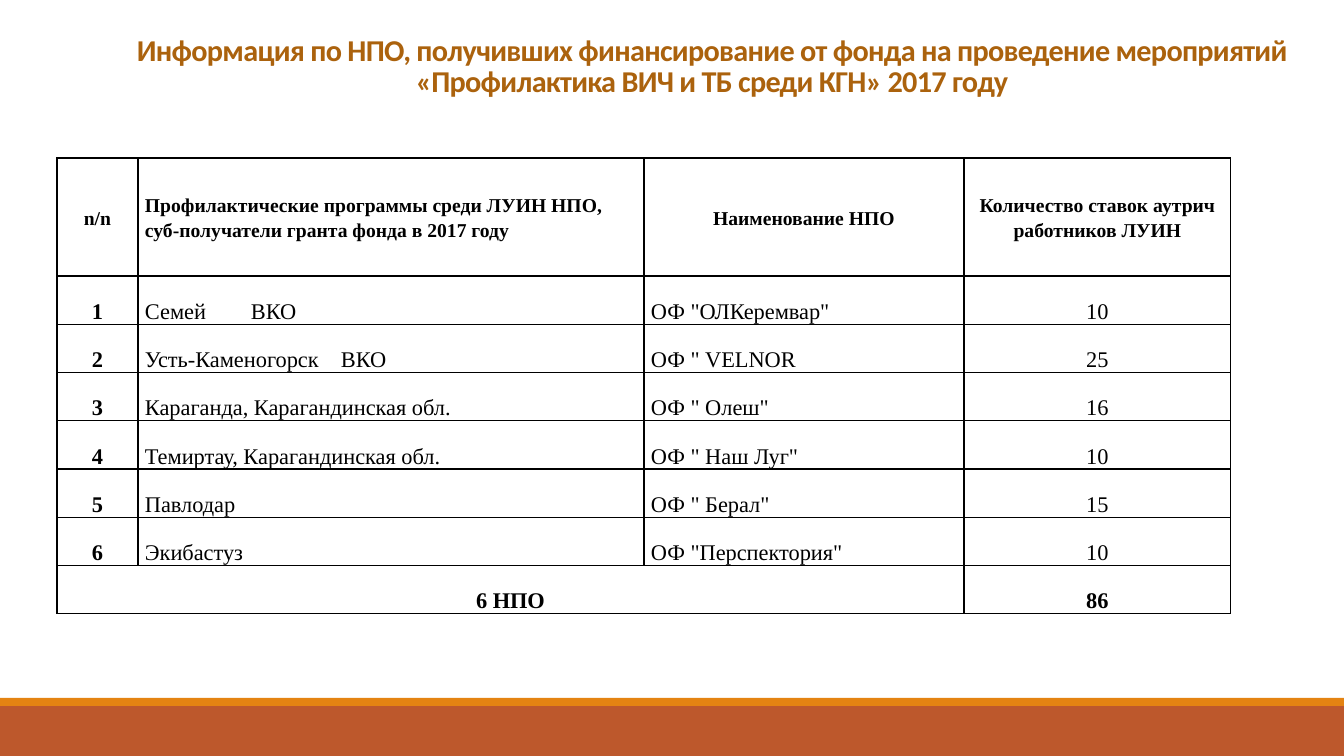
from lxml import etree
from pptx import Presentation
from pptx import util as u
from pptx.dml.color import RGBColor
from pptx.enum import shapes, text
from pptx.oxml.ns import qn

SCALE = 914400 / 100.8
INK = {"title": "AB620D", "text": "000000", "rust": "BD582C", "amber": "E48312"}
LEFT, MID = text.PP_ALIGN.LEFT, text.PP_ALIGN.CENTER

HEAD = ["n/n",
        "Профилактические программы среди ЛУИН НПО, суб-получатели гранта фонда в 2017 году",
        "Наименование НПО",
        "Количество ставок аутрич работников ЛУИН"]
GROUPS = [("Семей\tВКО", 'ОФ "ОЛКеремвар"', 10),
          ("Усть-Каменогорск\tВКО", 'ОФ " VELNOR', 25),
          ("Караганда, Карагандинская обл.", 'ОФ " Олеш"', 16),
          ("Темиртау, Карагандинская обл.", 'ОФ " Наш Луг"', 10),
          ("Павлодар", 'ОФ " Берал"', 15),
          ("Экибастуз", 'ОФ "Перспектория"', 10)]
TABS = {1: 106, 2: 196}  # row number: tab stop of the region, px
COLS = [81, 506, 320, 267]
HEAD_H, BODY_H = 118, 338


def px(n):
    return u.Emu(round(n * SCALE))


def style(run, font, size, ink, bold):
    run.font.name = font
    run.font.size = u.Pt(size)
    run.font.bold = bold
    run.font.color.rgb = RGBColor.from_string(INK[ink])


def add_band(slide, top, height, ink):
    band = slide.shapes.add_shape(shapes.MSO_SHAPE.RECTANGLE, 0, px(top), px(1344), px(height))
    band.shadow.inherit = False
    band.fill.solid()
    band.fill.fore_color.rgb = RGBColor.from_string(INK[ink])
    band.line.fill.background()


def set_title(slide, words):
    title = slide.shapes.title
    title.left, title.top, title.width, title.height = px(105), px(32), px(1214), px(90)
    frame = title.text_frame
    frame.text = words
    frame.word_wrap = True
    frame.auto_size = text.MSO_AUTO_SIZE.NONE
    frame.vertical_anchor = text.MSO_ANCHOR.TOP
    para = frame.paragraphs[0]
    para.alignment = MID
    para.line_spacing = 0.85
    for run in para.runs:
        style(run, "Calibri", 21.6, "title", True)
        run.font._element.set("spc", "-50")


def add_edges(cell):
    """Draw a thin black border on all four sides."""
    props = cell._tc.get_or_add_tcPr()
    for i, side in enumerate(("lnL", "lnR", "lnT", "lnB")):
        line = etree.Element(qn(f"a:{side}"), w=str(u.Pt(1)))
        fill = etree.SubElement(line, qn("a:solidFill"))
        etree.SubElement(fill, qn("a:srgbClr"), val=INK["text"])
        props.insert(i, line)


def add_tab(para, stop):
    stops = etree.SubElement(para._p.get_or_add_pPr(), qn("a:tabLst"))
    etree.SubElement(stops, qn("a:tab"), pos=str(px(stop)), algn="l")


def fill_cell(cell, words, size, bold, align, anchor):
    cell.fill.background()
    add_edges(cell)
    cell.margin_left = cell.margin_right = px(7)
    cell.margin_top = cell.margin_bottom = 0
    cell.vertical_anchor = anchor
    cell.text_frame.text = str(words)
    para = cell.text_frame.paragraphs[0]
    para.alignment = align
    para.line_spacing = 1.15
    for run in para.runs:
        style(run, "Times New Roman", size, "text", bold)


def add_grid(slide):
    total = sum(rate for _, _, rate in GROUPS)
    body = [(i, *group) for i, group in enumerate(GROUPS, 1)]
    rows = [HEAD, *body, (f"{len(GROUPS)} НПО", "", "", total)]
    count = len(rows) - 1
    frame = slide.shapes.add_table(len(rows), len(COLS), px(57), px(158),
                                   px(sum(COLS)), px(HEAD_H + BODY_H))
    table = frame.table
    table.first_row = table.horz_banding = False
    for col, width in zip(table.columns, COLS):
        col.width = px(width)
    for r, row in enumerate(rows):
        head, last = r == 0, r == count
        table.rows[r].height = px(HEAD_H if head else BODY_H / count)
        for c, words in enumerate(row):
            align = LEFT if c == 1 or (c == 2 and not head) else MID
            anchor = text.MSO_ANCHOR.MIDDLE if head else text.MSO_ANCHOR.BOTTOM
            fill_cell(table.cell(r, c), words, 14 if head else 16,
                      head or last or c == 0, align, anchor)
    for r, stop in TABS.items():
        add_tab(table.cell(r, 1).text_frame.paragraphs[0], stop)
    table.cell(count, 0).merge(table.cell(count, 2))


def main():
    deck = Presentation()
    deck.slide_width, deck.slide_height = px(1344), px(756)
    slide = deck.slides.add_slide(deck.slide_layouts[5])
    add_band(slide, 706, 50, "rust")
    add_band(slide, 698, 8, "amber")
    set_title(slide, "Информация по НПО, получивших финансирование от фонда на проведение "
                     "мероприятий «Профилактика ВИЧ и ТБ среди КГН» 2017 году")
    add_grid(slide)
    deck.save("out.pptx")


if __name__ == "__main__":
    main()
